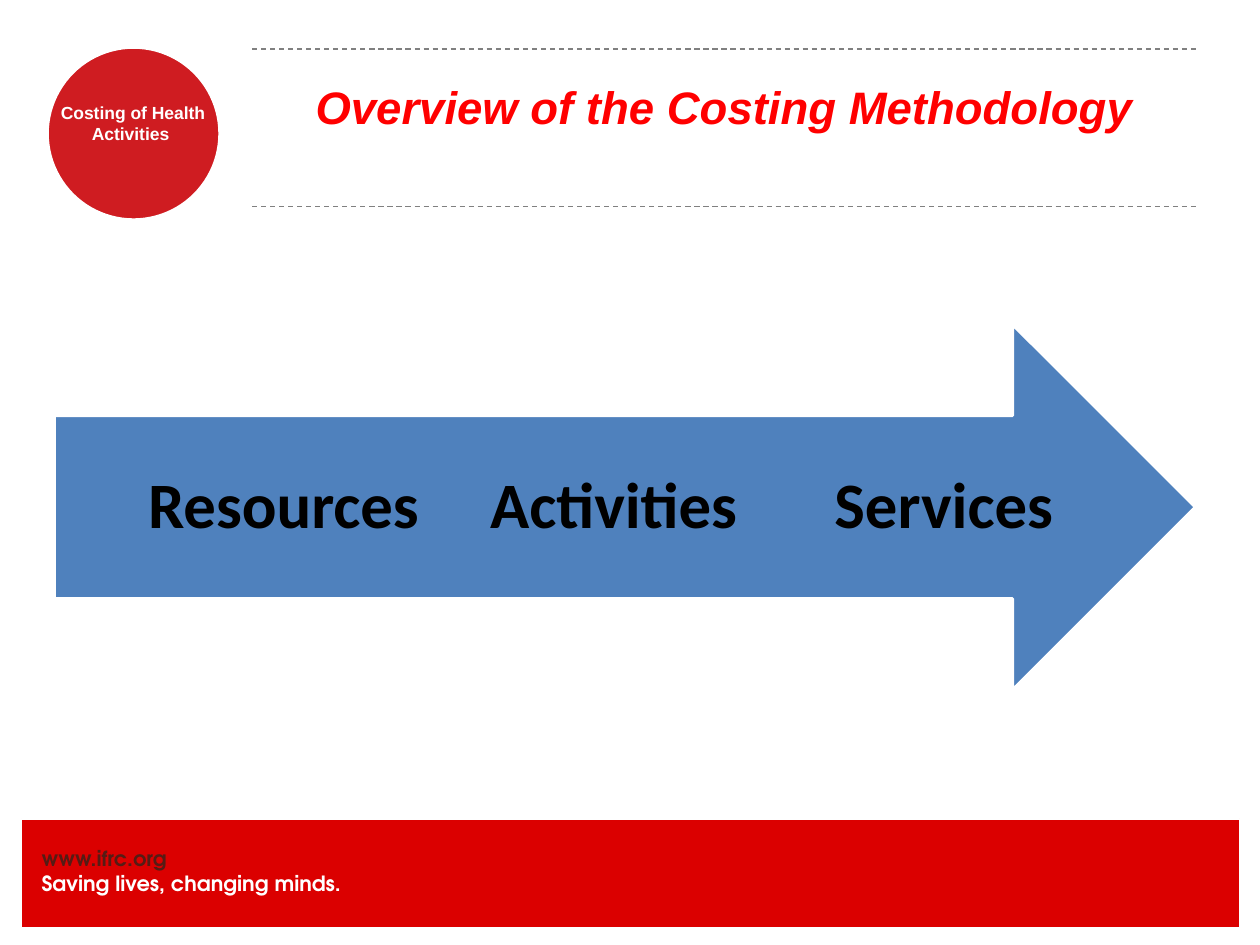
"""Build the costing methodology overview slide."""
from lxml import etree
from pptx import Presentation
from pptx.dml.color import RGBColor
from pptx.enum.dml import MSO_LINE
from pptx.enum.shapes import MSO_CONNECTOR, MSO_SHAPE
from pptx.enum.text import MSO_ANCHOR, PP_ALIGN
from pptx.oxml.ns import qn
from pptx.util import Inches, Pt

WHITE = RGBColor(0xFF, 0xFF, 0xFF)
BLACK = RGBColor(0, 0, 0)
GREY = RGBColor(0x80, 0x80, 0x80)
FOOTER_RED = RGBColor(0xDB, 0, 0)
BADGE_RED = RGBColor(0xCF, 0x1C, 0x21)
TITLE_RED = RGBColor(0xFF, 0, 0)
BROWN = RGBColor(0x55, 0x1C, 0x15)
BLUE = RGBColor(0x4F, 0x81, 0xBD)

prs = Presentation()
prs.slide_width, prs.slide_height = Inches(10), Inches(7.5)
s = prs.slides.add_slide(prs.slide_layouts[6])


def add_text(text, x, y, w, h, size, colors, font="Arial", italic=False,
             align=PP_ALIGN.CENTER, anchor=MSO_ANCHOR.TOP, spacing=None):
    tf = s.shapes.add_textbox(Inches(x), Inches(y), Inches(w), Inches(h)).text_frame
    tf.word_wrap = True
    tf.vertical_anchor = anchor
    tf.margin_left = tf.margin_right = tf.margin_top = tf.margin_bottom = 0
    tf.text = text
    for p, color in zip(tf.paragraphs, colors):
        p.alignment = align
        p.line_spacing = spacing
        r = p.runs[0]
        r.font.name, r.font.size = font, Pt(size)
        r.font.bold, r.font.italic = True, italic
        r.font.color.rgb = color


def add_filled(kind, x, y, w, h, fill, line_width):
    sp = s.shapes.add_shape(kind, Inches(x), Inches(y), Inches(w), Inches(h))
    sp.shadow.inherit = False
    sp.fill.solid()
    sp.fill.fore_color.rgb = fill
    sp.line.color.rgb = WHITE
    sp.line.width = Pt(line_width)


add_filled(MSO_SHAPE.RECTANGLE, 0.17, 6.5, 9.67, 0.86, FOOTER_RED, 0.75)
add_text("www.ifrc.org\nSaving lives, changing minds.", 0.33, 6.71, 3.42, 0.4, 12,
         [BROWN, WHITE], font="TeX Gyre Adventor", align=PP_ALIGN.LEFT)

add_filled(MSO_SHAPE.OVAL, 0.37, 0.37, 1.38, 1.38, BADGE_RED, 2.5)
add_text("Costing of Health Activities ", 0.43, 0.81, 1.25, 0.34, 10, [WHITE])

for y in (0.39, 1.64):
    rule = s.shapes.add_connector(MSO_CONNECTOR.STRAIGHT, Inches(2), Inches(y),
                                  Inches(9.5), Inches(y))
    rule.line.color.rgb = GREY
    rule.line.width = Pt(0.75)
    rule.line.dash_style = MSO_LINE.DASH
    etree.SubElement(rule._element.spPr, qn("a:effectLst"))

add_text("Overview of the Costing Methodology", 2, 0.38, 7.5, 0.93, 26, [TITLE_RED],
         italic=True, anchor=MSO_ANCHOR.MIDDLE)

add_filled(MSO_SHAPE.RIGHT_ARROW, 0.43, 2.57, 9.06, 2.91, BLUE, 2)
for i, stage in enumerate(("Resources", "Activities", "Services")):
    add_text(stage, 1.16 + 2.62 * i, 3.3, 2.18, 1.46, 37, [BLACK], font="Calibri",
             anchor=MSO_ANCHOR.MIDDLE, spacing=0.9)

prs.save("out.pptx")
